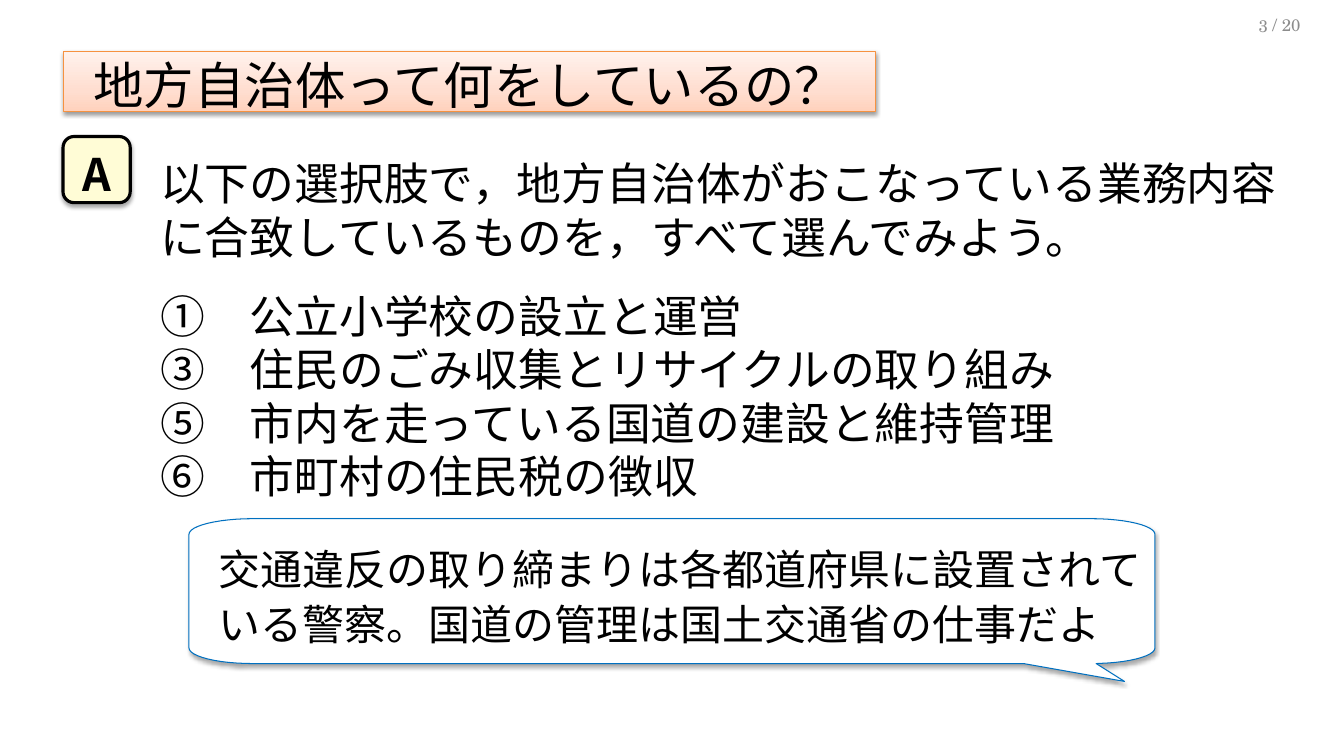
import math
from pptx import Presentation, util as u
from pptx.dml.color import RGBColor
from pptx.enum import shapes, text
from pptx.oxml import parse_xml, ns

# Content
TITLE = "地方自治体って何をしているの？"
MARK = "A"
TASK = ["以下の選択肢で，地方自治体がおこなっている業務内容",
        "に合致しているものを，すべて選んでみよう。"]
ITEMS = ["①　公立小学校の設立と運営",
         "③　住民のごみ収集とリサイクルの取り組み",
         "⑤　市内を走っている国道の建設と維持管理",
         "⑥　市町村の住民税の徴収"]
HINT = "交通違反の取り締まりは各都道府県に設置されている警察。国道の管理は国土交通省の仕事だよ"
PAGES = [("3", (918, 12, 299, 25)), ("/ 20", (949, 11, 299, 26))]

# Theme
THEME = {
    "sans": "Noto Sans CJK JP", "serif": "TeX Gyre Schola",
    "ink": "000000", "gray": "8C8C8C", "paper": "FFFFFF", "cream": "FFFCD6",
    "blue": "0070C0", "orange": "F69240",
    "peach": [(0, "FFD2BD"), (35, "FFDED0"), (100, "FFF2ED")],
    "title": 36, "body": 32, "hint": 30, "page": 12,
}
PX = 9525  # 96 px to the inch
WIDE, HIGH = 1280, 720
A = ns.nsdecls("a")


def px(*vals):
    return [v * PX for v in vals]


def rgb(name):
    return RGBColor.from_string(THEME[name])


def write(shape, lines, size, face="sans", ink="ink", bold=False,
          align="LEFT", lead=None, indent=0, **frame):
    """Fill a text frame; any frame format goes in as a keyword."""
    tf = shape.text_frame
    for key, val in {"word_wrap": True, **frame}.items():
        setattr(tf, key, val)
    for i, line in enumerate(lines):
        para = tf.paragraphs[0] if i == 0 else tf.add_paragraph()
        para.alignment = getattr(text.PP_ALIGN, align)
        if lead:
            para.line_spacing = u.Pt(lead)
        if indent:
            para._p.get_or_add_pPr().set("marL", str(indent * PX))
        run = para.add_run()
        run.text = line
        look = {"name": THEME[face], "size": u.Pt(THEME[size]), "bold": bold}
        for key, val in look.items():
            setattr(run.font, key, val)
        run.font.color.rgb = rgb(ink)
        run.font._element.find(ns.qn("a:latin")).addnext(
            parse_xml(f'<a:ea {A} typeface="{THEME[face]}"/>'))


def paint(shape, fill, line, width, alpha, dist):
    """Set fill, outline and a soft drop shadow."""
    if isinstance(THEME[fill], list):
        stops = "".join(f'<a:gs pos="{pos * 1000}"><a:srgbClr val="{hue}"/></a:gs>'
                        for pos, hue in THEME[fill])
        shape._element.spPr.insert(2, parse_xml(
            f'<a:gradFill {A} rotWithShape="1"><a:gsLst>{stops}</a:gsLst>'
            '<a:lin ang="16200000" scaled="0"/></a:gradFill>'))
    else:
        shape.fill.solid()
        shape.fill.fore_color.rgb = rgb(fill)
    shape.line.color.rgb = rgb(line)
    shape.line.width = u.Pt(width)
    shape.shadow.inherit = False
    shape._element.spPr.find(ns.qn("a:effectLst")).append(parse_xml(
        f'<a:outerShdw {A} blurRad="{u.Pt(3.1)}" dist="{u.Pt(dist)}" dir="5400000" '
        f'rotWithShape="0"><a:srgbClr val="{THEME["ink"]}">'
        f'<a:alpha val="{alpha * 1000}"/></a:srgbClr></a:outerShdw>'))


def arc(mid, radii, start, steps=12):
    """Points of a clockwise quarter ellipse from a start angle."""
    turns = [math.radians(start + 90 * i / steps) for i in range(steps + 1)]
    return [(mid[0] + radii[0] * math.cos(t), mid[1] + radii[1] * math.sin(t))
            for t in turns]


def bubble(tree):
    """Speech bubble with oval corners and a tail at the lower right."""
    left, top, right, base = 180, 494, 1100, 632
    rx, ry = 61, 15
    tail = [(1044, base), (1071, 649), (975, base)]
    west, east, north, south = left + rx, right - rx, top + ry, base - ry
    pts = (arc((west, north), (rx, ry), 180) + arc((east, north), (rx, ry), 270)
           + arc((east, south), (rx, ry), 0)[:-1] + tail
           + arc((west, south), (rx, ry), 90))
    pts = [(round(x * PX), round(y * PX)) for x, y in pts]
    pen = tree.build_freeform(*pts[0])
    pen.add_line_segments(pts[1:], close=True)
    return pen.convert_to_shape()


def main():
    deck = Presentation()
    deck.slide_width, deck.slide_height = px(WIDE, HIGH)
    tree = deck.slides.add_slide(deck.slide_layouts[6]).shapes
    kind, mid, top = shapes.MSO_SHAPE, text.MSO_ANCHOR.MIDDLE, text.MSO_ANCHOR.TOP

    # Page number
    for label, box in PAGES:
        write(tree.add_textbox(*px(*box)), [label], "page", "serif", "gray",
              align="RIGHT", vertical_anchor=mid)

    # Title bar
    bar = tree.add_shape(kind.RECTANGLE, *px(60, 49, 774, 57))
    paint(bar, "peach", "orange", 0.75, 38, 1.6)
    write(bar, [TITLE], "title", align="CENTER", vertical_anchor=mid,
          margin_top=6 * PX, margin_bottom=0)

    # Answer mark
    badge = tree.add_shape(kind.ROUNDED_RECTANGLE, *px(60, 130, 64, 63))
    paint(badge, "cream", "ink", 2.25, 35, 1.8)
    write(badge, [MARK], "body", bold=True, align="CENTER", vertical_anchor=mid,
          margin_top=8 * PX, margin_bottom=0)

    # Task and choices
    for lines, y, tall in [(ITEMS, 265, 217), (TASK, 139, 113)]:
        write(tree.add_textbox(*px(143, y, 1111, tall)), lines, "body", lead=38.2,
              margin_top=10 * PX, vertical_anchor=top)

    # Hint bubble
    hint = bubble(tree)
    paint(hint, "paper", "blue", 0.75, 35, 1.8)
    write(hint, [HINT], "hint", lead=39.4, indent=19, margin_top=19 * PX,
          vertical_anchor=top)

    deck.save("out.pptx")


if __name__ == "__main__":
    main()
